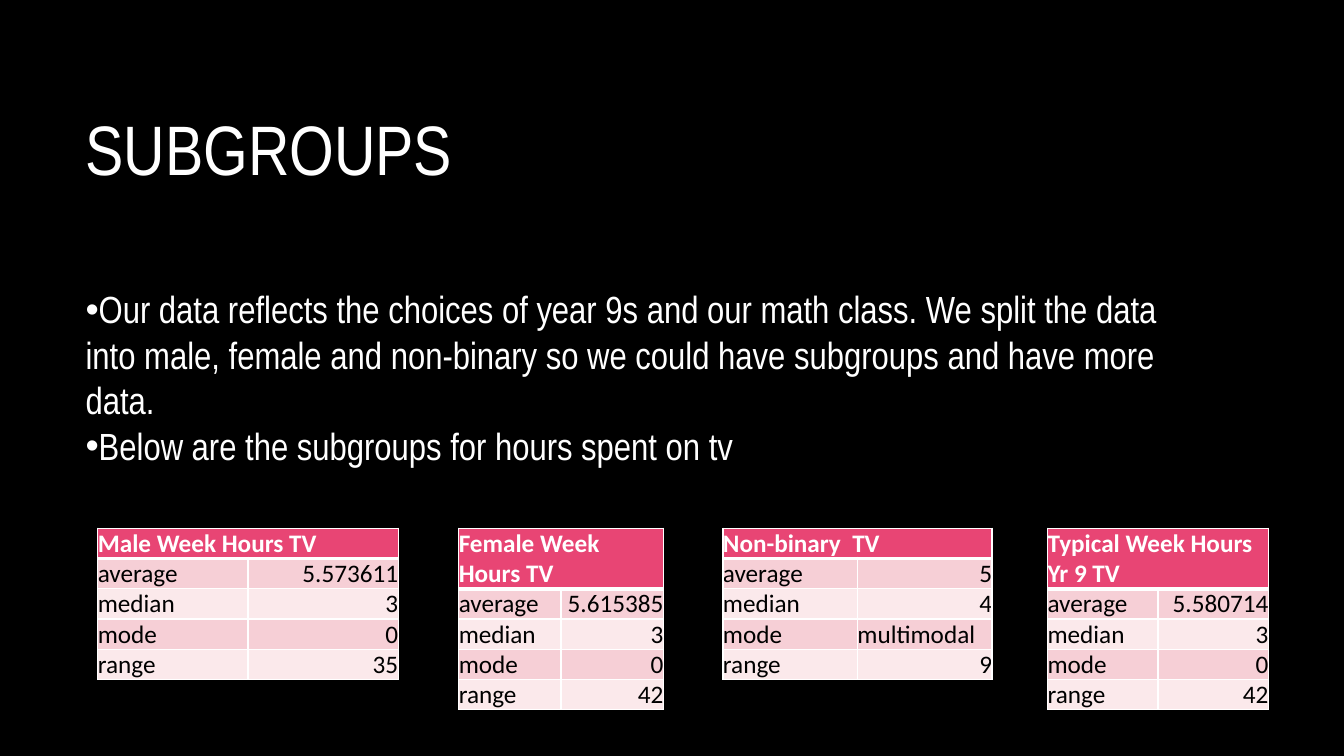
from lxml import etree
from pptx import Presentation
from pptx.dml.color import RGBColor
from pptx.enum.text import MSO_ANCHOR as ANCHOR, PP_ALIGN as ALIGN
from pptx.oxml.ns import qn
from pptx.util import Inches, Pt

BLACK = RGBColor(0x00, 0x00, 0x00)
WHITE = RGBColor(0xFF, 0xFF, 0xFF)
PINK = RGBColor(0xE8, 0x45, 0x74)
BAND_DARK = RGBColor(0xF6, 0xCF, 0xD6)
BAND_LIGHT = RGBColor(0xFB, 0xE9, 0xEB)

TITLE = {"name": "Arial Narrow", "size": Pt(50)}
BODY = {"name": "Arial Narrow", "size": Pt(27)}
HEADER = {"name": "Calibri", "size": Pt(18), "bold": True}
CELL = {"name": "Calibri", "size": Pt(18), "bold": False}

MEASURES = ["average", "median", "mode", "range"]
TABLE_TOP = 5.24
ROW_HEIGHT = 0.3
# header, left, width, header lines, values
SUBGROUPS = [
    ("Male Week Hours TV", 0.97, 2.98, 1, ["5.573611", "3", "0", "35"]),
    ("Female Week Hours TV", 4.55, 2.03, 2, ["5.615385", "3", "0", "42"]),
    ("Non-binary  TV", 7.17, 2.67, 1, ["5", "4", "multimodal", "9"]),
    ("Typical Week Hours Yr 9 TV", 10.39, 2.19, 2,
     ["5.580714", "3", "0", "42"]),
]


class SlideBuilder:
    def __init__(self, prs):
        self.s = prs.slides.add_slide(prs.slide_layouts[6])
        fill = self.s.background.fill
        fill.solid()
        fill.fore_color.rgb = BLACK

    def run(self, p, text, style, color):
        r = p.add_run()
        r.text = text
        for key, value in style.items():
            setattr(r.font, key, value)
        r.font.color.rgb = color

    def bullet(self, p):
        pPr = p._p.get_or_add_pPr()
        pPr.set("marL", "0")
        pPr.set("indent", str(-Inches(0.31)))
        buClr = etree.SubElement(pPr, qn("a:buClr"))
        etree.SubElement(buClr, qn("a:srgbClr"), val=str(WHITE))
        etree.SubElement(pPr, qn("a:buFont"), typeface="Arial")
        etree.SubElement(pPr, qn("a:buChar"), char="•")

    def text(self, box, lines, style, anchor=ANCHOR.TOP, bullets=False):
        sp = self.s.shapes.add_textbox(*map(Inches, box))
        tf = sp.text_frame
        tf.word_wrap = True
        tf.vertical_anchor = anchor
        for i, line in enumerate(lines):
            p = tf.add_paragraph() if i else tf.paragraphs[0]
            if bullets:
                self.bullet(p)
            self.run(p, line, style, WHITE)

    def borders(self, cell, top, bottom):
        tcPr = cell._tc.get_or_add_tcPr()
        for side, width in zip("LRTB", (1, 1, top, bottom)):
            ln = etree.SubElement(tcPr, qn(f"a:ln{side}"), w=str(Pt(width)))
            fill = etree.SubElement(ln, qn("a:solidFill"))
            etree.SubElement(fill, qn("a:srgbClr"), val=str(WHITE))

    def cell(self, cell, text, style, color, fill, top=1, bottom=1):
        self.borders(cell, top, bottom)
        cell.fill.solid()
        cell.fill.fore_color.rgb = fill
        cell.vertical_anchor = ANCHOR.MIDDLE
        for side in ("left", "right", "top", "bottom"):
            setattr(cell, f"margin_{side}", 0)
        p = cell.text_frame.paragraphs[0]
        if text:
            self.run(p, text, style, color)
        return p

    def table(self, header, left, width, header_lines, values):
        heights = [ROW_HEIGHT * header_lines] + [ROW_HEIGHT] * len(values)
        box = (left, TABLE_TOP, width, sum(heights))
        table = self.s.shapes.add_table(
            len(heights), 2, *map(Inches, box)).table
        for row, height in zip(table.rows, heights):
            row.height = Inches(height)

        # Header across both columns
        table.cell(0, 0).merge(table.cell(0, 1))
        for col, text in enumerate((header, "")):
            self.cell(table.cell(0, col), text, HEADER, WHITE, PINK, bottom=3)

        # Banded measures, numbers to the right
        for row, pair in enumerate(zip(MEASURES, values), 1):
            fill = BAND_DARK if row % 2 else BAND_LIGHT
            for col, text in enumerate(pair):
                p = self.cell(table.cell(row, col), text, CELL, BLACK, fill,
                              top=3 if row == 1 else 1)
                p.alignment = ALIGN.LEFT if text.isalpha() else ALIGN.RIGHT


def main():
    prs = Presentation()
    prs.slide_width, prs.slide_height = Inches(13.33), Inches(7.5)
    slide = SlideBuilder(prs)

    # Title and explanation
    slide.text((0.75, 0.67, 11.08, 1.59), ["SUBGROUPS"], TITLE, ANCHOR.MIDDLE)
    slide.text((0.75, 2.79, 11.08, 3.54), [
        "Our data reflects the choices of year 9s and our math class. "
        "We split the data into male, female and non-binary so we could "
        "have subgroups and have more data.",
        "Below are the subgroups for hours spent on tv",
    ], BODY, bullets=True)

    # One table per subgroup
    for subgroup in SUBGROUPS:
        slide.table(*subgroup)

    prs.save("out.pptx")


if __name__ == "__main__":
    main()
